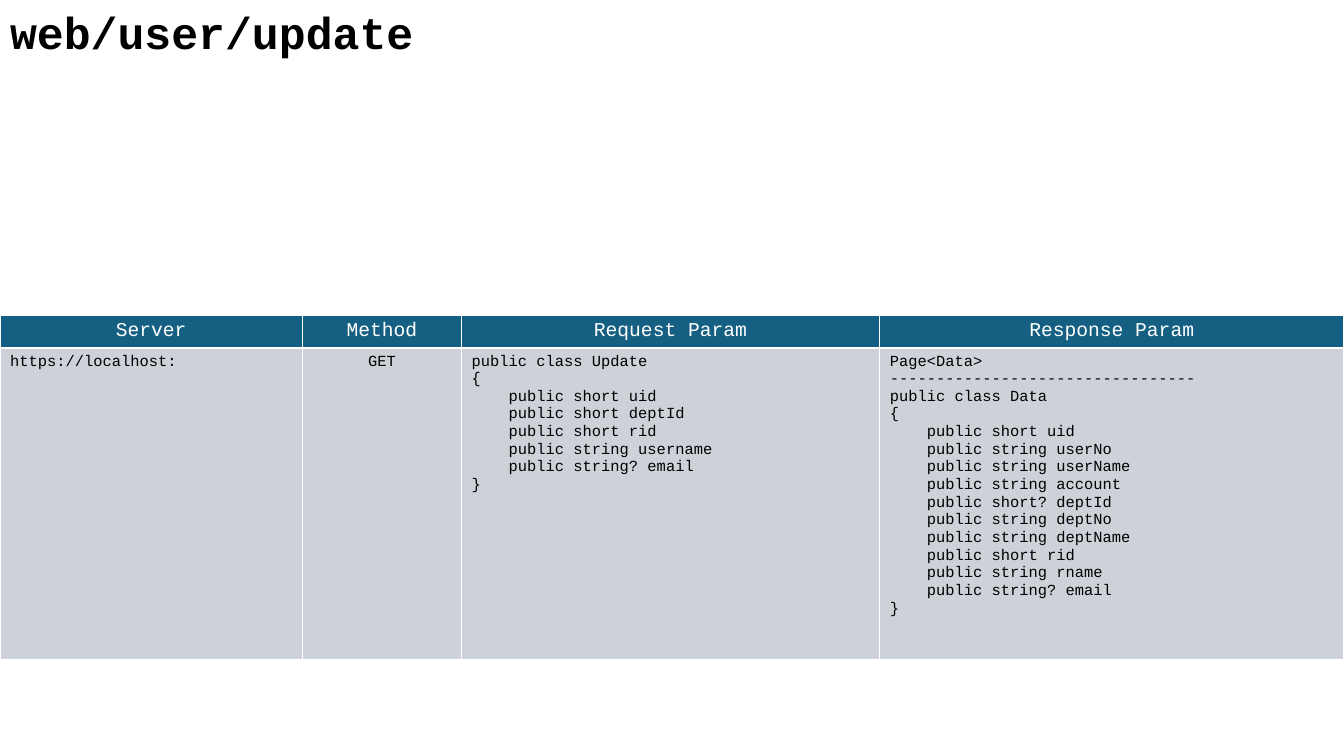
import pptx
import pptx.util
import pptx.dml.color
import pptx.enum.text
import lxml.etree

Cm, Pt = pptx.util.Cm, pptx.util.Pt
LEFT = pptx.enum.text.PP_ALIGN.LEFT
CENTER = pptx.enum.text.PP_ALIGN.CENTER
FONT = "Courier New"

TITLE = "web/user/update"
HEADERS = ["Server", "Method", "Request Param", "Response Param"]
REQUEST = """public class Update
{
    public short uid
    public short deptId
    public short rid
    public string username
    public string? email
}"""
RESPONSE = """Page<Data>
---------------------------------
public class Data
{
    public short uid
    public string userNo
    public string userName
    public string account
    public short? deptId
    public string deptNo
    public string deptName
    public short rid
    public string rname
    public string? email
}"""
DETAILS = ["https://localhost:", "GET", REQUEST, RESPONSE]
COLUMN_WIDTHS = [7.62, 4.01, 10.54, 11.7]
ROWS = [
    {"texts": HEADERS, "height": 0.82, "fill": "156082", "color": "FFFFFF",
     "size": 14, "aligns": [CENTER] * 4},
    {"texts": DETAILS, "height": 7.84, "fill": "CCD2D8", "color": "000000",
     "size": 11, "aligns": [LEFT, CENTER, LEFT, LEFT]},
]


def rgb(value):
    return pptx.dml.color.RGBColor.from_string(value)


def write(frame, text, align, color, **font_values):
    frame.text = text
    for para in frame.paragraphs:
        para.alignment = align
        for span in para.runs:
            for name, value in font_values.items():
                setattr(span.font, name, value)
            span.font.color.rgb = rgb(color)


def add_borders(cell, color, width):
    properties = cell._tc.get_or_add_tcPr()
    namespace = pptx.oxml.ns.nsuri("a")
    for side in ("lnL", "lnR", "lnT", "lnB"):
        line = lxml.etree.SubElement(properties, f"{{{namespace}}}{side}", w=str(Pt(width)))
        fill = lxml.etree.SubElement(line, f"{{{namespace}}}solidFill")
        lxml.etree.SubElement(fill, f"{{{namespace}}}srgbClr", val=color)


def add_title(page):
    title = page.shapes.title
    box = {"left": Cm(0), "top": Cm(0), "width": Cm(24), "height": Cm(1.62)}
    for name, value in box.items():
        setattr(title, name, value)
    frame = title.text_frame
    layout = {"word_wrap": True, "vertical_anchor": pptx.enum.text.MSO_ANCHOR.TOP,
              "auto_size": pptx.enum.text.MSO_AUTO_SIZE.NONE}
    for name, value in layout.items():
        setattr(frame, name, value)
    write(frame, TITLE, LEFT, "000000", name=FONT, size=Pt(32), bold=True)


def add_endpoint_table(page):
    height = sum(row["height"] for row in ROWS)
    table = page.shapes.add_table(len(ROWS), len(HEADERS), Cm(0), Cm(7.95),
                                  Cm(sum(COLUMN_WIDTHS)), Cm(height)).table
    for column, width in zip(table.columns, COLUMN_WIDTHS):
        column.width = Cm(width)
    for table_row, row in zip(table.rows, ROWS):
        table_row.height = Cm(row["height"])
        for cell, text, align in zip(table_row.cells, row["texts"], row["aligns"]):
            add_borders(cell, "FFFFFF", 1)
            cell.fill.solid()
            cell.fill.fore_color.rgb = rgb(row["fill"])
            write(cell.text_frame, text, align, row["color"],
                  name=FONT, size=Pt(row["size"]), bold=False)


def main():
    deck = pptx.Presentation()
    deck.slide_width, deck.slide_height = Cm(33.87), Cm(19.05)
    page = deck.slides.add_slide(deck.slide_layouts[5])
    add_title(page)
    add_endpoint_table(page)
    deck.save("out.pptx")


if __name__ == "__main__":
    main()
